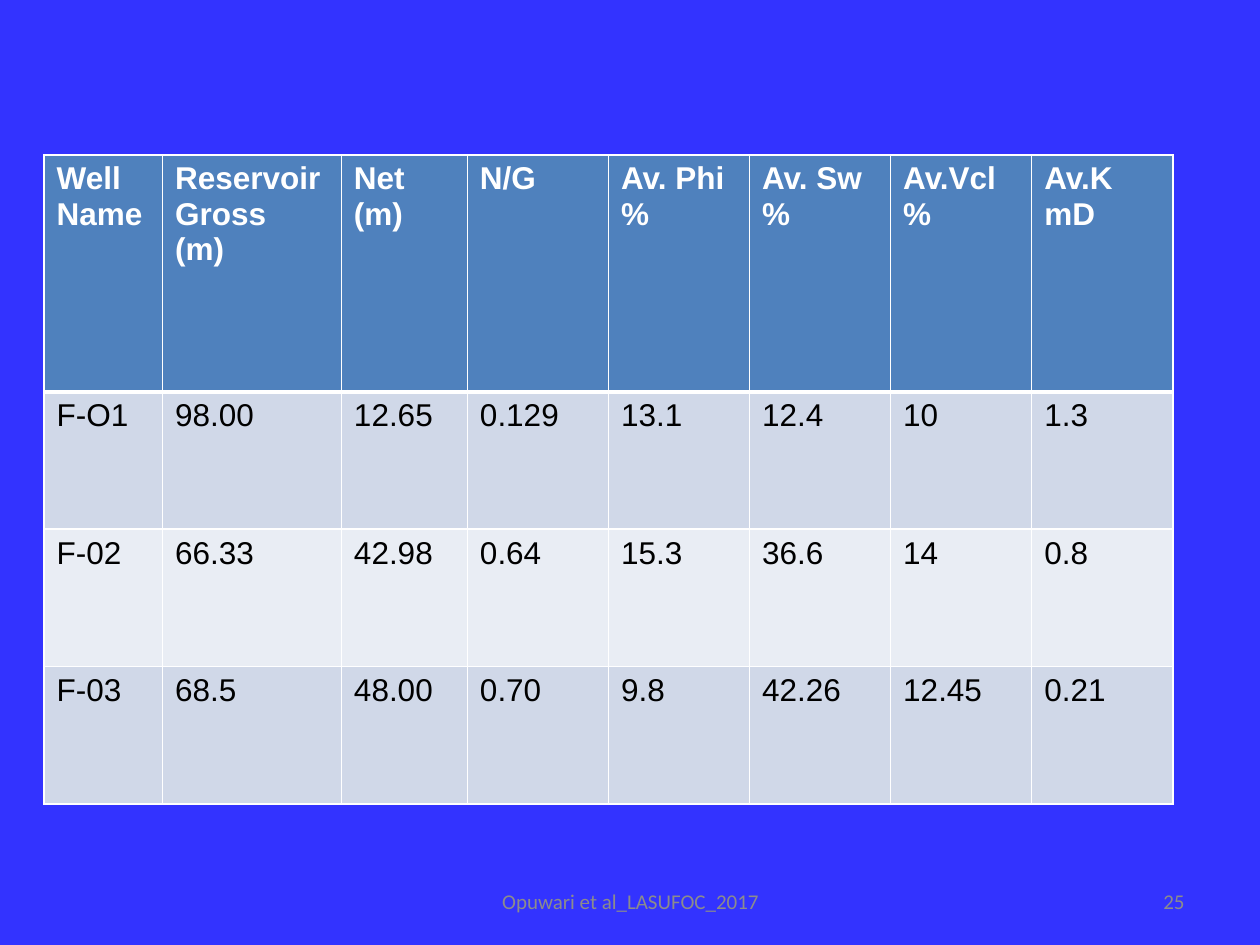
from dataclasses import dataclass

from lxml.etree import SubElement
from pptx import Presentation
from pptx.dml.color import RGBColor
from pptx.enum.text import MSO_ANCHOR, PP_ALIGN
from pptx.oxml.ns import qn
from pptx.util import Inches, Pt


@dataclass(frozen=True)
class Theme:
    background: str = "3333FF"
    header_fill: str = "4F81BD"
    band_fills: tuple = ("D0D8E8", "E9EDF4")
    border: str = "FFFFFF"
    header_text: str = "FFFFFF"
    body_text: str = "000000"
    footer_text: str = "8C8C8C"
    table_font: str = "Arial"
    footer_font: str = "Calibri"
    table_size: int = 18
    footer_size: int = 12
    thin_border: int = 1
    thick_border: int = 3


THEME = Theme()

HEADERS = ["Well Name", "Reservoir\nGross\n(m)", "Net\n(m)", "N/G",
           "Av. Phi\n%", "Av. Sw\n%", "Av.Vcl\n%", "Av.K\nmD"]
WELLS = [
    ["F-O1", "98.00", "12.65", "0.129", "13.1", "12.4", "10", "1.3"],
    ["F-02", "66.33", "42.98", "0.64", "15.3", "36.6", "14", "0.8"],
    ["F-03", "68.5", "48.00", "0.70", "9.8", "42.26", "12.45", "0.21"],
]
COLUMN_WIDTHS = [0.94, 1.42, 1] + [1.12] * 5
ROW_HEIGHTS = [1.88] + [1.09] * len(WELLS)


def write_text(frame, text, font, size, color, bold=False, align=PP_ALIGN.LEFT):
    for index, line in enumerate(text.split("\n")):
        para = frame.add_paragraph() if index else frame.paragraphs[0]
        para.alignment = align
        span = para.add_run()
        span.text = line
        span.font.name = font
        span.font.size = Pt(size)
        span.font.bold = bold
        span.font.color.rgb = RGBColor.from_string(color)


def set_borders(cell, widths):
    properties = cell._tc.get_or_add_tcPr()
    for side, width in widths.items():
        line = SubElement(properties, qn(f"a:ln{side}"), w=str(Pt(width)))
        fill = SubElement(line, qn("a:solidFill"))
        SubElement(fill, qn("a:srgbClr"), val=THEME.border)


def style_cell(cell, text, row):
    is_header = row == 0
    thin, thick = THEME.thin_border, THEME.thick_border
    set_borders(cell, {"L": thin, "R": thin,
                       "T": thick if row == 1 else thin,
                       "B": thick if is_header else thin})
    band = THEME.band_fills[(row - 1) % len(THEME.band_fills)]
    cell.fill.solid()
    cell.fill.fore_color.rgb = RGBColor.from_string(
        THEME.header_fill if is_header else band)
    write_text(cell.text_frame, text, THEME.table_font, THEME.table_size,
               THEME.header_text if is_header else THEME.body_text, is_header)


def add_well_table(page, left, top):
    rows = [HEADERS] + WELLS
    table = page.shapes.add_table(
        len(rows), len(HEADERS), Inches(left), Inches(top),
        Inches(sum(COLUMN_WIDTHS)), Inches(sum(ROW_HEIGHTS))).table
    for column, width in zip(table.columns, COLUMN_WIDTHS):
        column.width = Inches(width)
    for row, height in zip(table.rows, ROW_HEIGHTS):
        row.height = Inches(height)
    for row, values in enumerate(rows):
        for column, value in enumerate(values):
            style_cell(table.cell(row, column), value, row)


def add_footer_text(page, text, left, top, width, height, align):
    box = page.shapes.add_textbox(
        Inches(left), Inches(top), Inches(width), Inches(height))
    frame = box.text_frame
    frame.word_wrap = True
    frame.vertical_anchor = MSO_ANCHOR.MIDDLE
    write_text(frame, text, THEME.footer_font, THEME.footer_size,
               THEME.footer_text, align=align)


def add_footer(page, top, height):
    add_footer_text(page, "Opuwari et al_LASUFOC_2017",
                    3.42, top, 3.17, height, PP_ALIGN.CENTER)
    add_footer_text(page, "25", 7.17, top, 2.33, height, PP_ALIGN.RIGHT)


def main():
    deck = Presentation()
    deck.slide_width, deck.slide_height = Inches(10), Inches(7.5)
    page = deck.slides.add_slide(deck.slide_layouts.get_by_name("Blank"))
    page.background.fill.solid()
    page.background.fill.fore_color.rgb = RGBColor.from_string(THEME.background)
    add_footer(page, 6.95, 0.4)
    add_well_table(page, 0.35, 1.23)
    deck.save("out.pptx")


if __name__ == "__main__":
    main()
